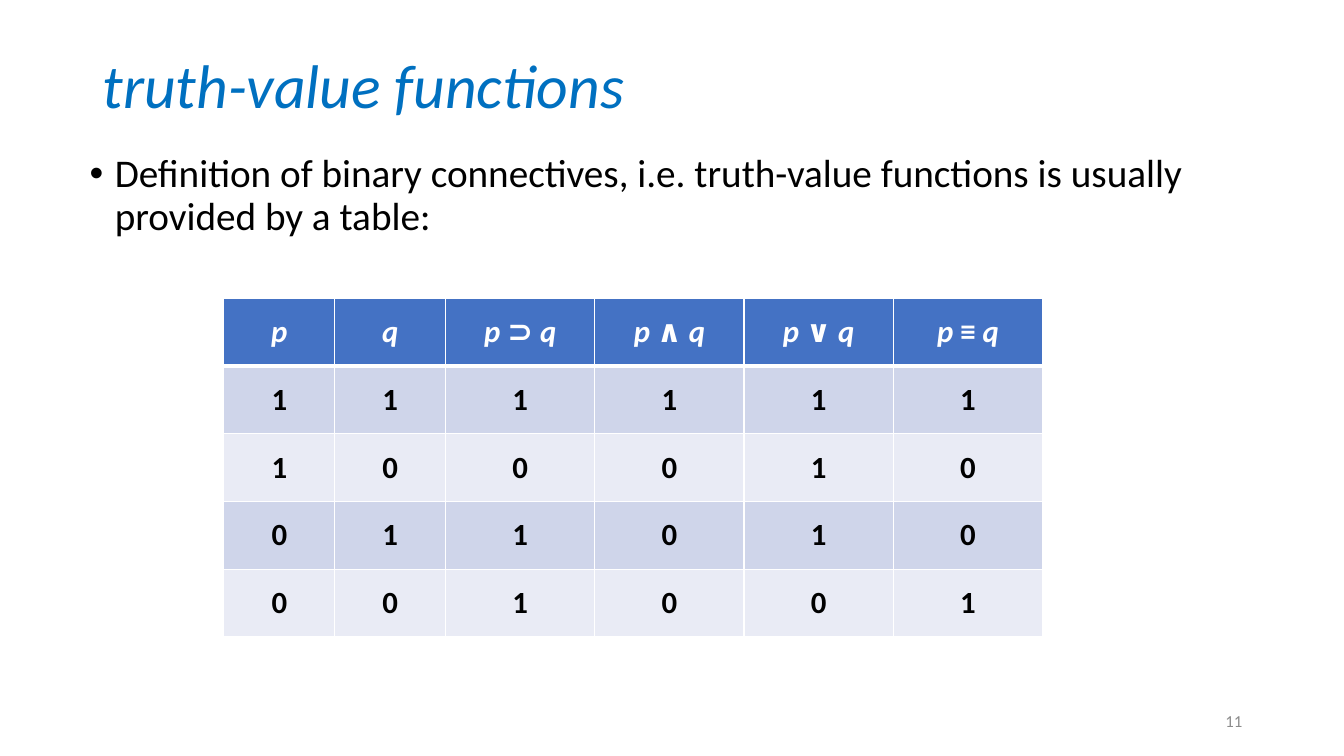
from pptx import Presentation
from pptx.dml.color import RGBColor
from pptx.enum.text import MSO_ANCHOR, PP_ALIGN
from pptx.oxml import parse_xml
from pptx.oxml.ns import nsdecls
from pptx.util import Pt

PX = 9144  # 100 px to the inch
FONT = "Calibri"
WHITE, BLACK, GREY = "FFFFFF", "000000", "8C8C8C"
TITLE, HEAD = "0070C0", "4472C4"
BANDS = ["CFD5EA", "E9EBF5"]

HEADS = ["p", "q", "p ⊃ q", "p ∧ q", "p ∨ q", "p ≡ q"]
ROWS = ["111111", "100010", "011010", "001001"]
WIDTHS = [110] * 2 + [148] * 4


def px(n):
    return round(n * PX)


def color(code):
    return RGBColor.from_string(code)


def add_run(para, text, size, code, bold=False, italic=False):
    run = para.add_run()
    run.text = text
    font = run.font
    font.name, font.size = FONT, Pt(size)
    font.bold, font.italic = bold, italic
    font.color.rgb = color(code)


def add_text(slide, box, anchor=MSO_ANCHOR.TOP):
    frame = slide.shapes.add_textbox(*map(px, box)).text_frame
    frame.word_wrap = True
    frame.vertical_anchor = anchor
    return frame.paragraphs[0]


def add_title(slide, box):
    para = add_text(slide, box, MSO_ANCHOR.MIDDLE)
    para.line_spacing = 0.9
    add_run(para, "truth-value functions", 44, TITLE, italic=True)


def add_body(slide, box):
    para = add_text(slide, box)
    para.line_spacing = 0.9
    para.space_before = Pt(10)
    props = para._p.get_or_add_pPr()
    props.set("marL", str(px(25)))
    props.set("indent", str(px(-25)))
    props.append(parse_xml(f'<a:buFont {nsdecls("a")} typeface="Arial"/>'))
    props.append(parse_xml(f'<a:buChar {nsdecls("a")} char="•"/>'))
    add_run(para, "Definition of binary connectives, i.e. truth-value "
            "functions is usually provided by a table:", 28, BLACK)


def add_number(slide, box):
    para = add_text(slide, box, MSO_ANCHOR.MIDDLE)
    para.alignment = PP_ALIGN.RIGHT
    add_run(para, "11", 12, GREY)


def set_edges(cell, top, bottom):
    props = cell._tc.get_or_add_tcPr()
    edges = zip(["lnL", "lnR", "lnT", "lnB"], [1, 1, top, bottom])
    for i, (tag, width) in enumerate(edges):
        # Edges come before the fill
        props.insert(i, parse_xml(
            f'<a:{tag} {nsdecls("a")} w="{Pt(width)}"><a:solidFill>'
            f'<a:srgbClr val="{WHITE}"/></a:solidFill></a:{tag}>'))


def style_cell(cell, fill, top=1, bottom=1):
    cell.fill.solid()
    cell.fill.fore_color.rgb = color(fill)
    cell.vertical_anchor = MSO_ANCHOR.MIDDLE
    set_edges(cell, top, bottom)
    para = cell.text_frame.paragraphs[0]
    para.alignment = PP_ALIGN.CENTER
    return para


def add_grid(slide, box):
    count = len(ROWS) + 1
    table = slide.shapes.add_table(count, len(HEADS), *map(px, box)).table
    for col, width in zip(table.columns, WIDTHS):
        col.width = px(width)
    for row in table.rows:
        row.height = px(box[3] / count)

    # Header: letters in italics, connectives upright
    for c, head in enumerate(HEADS):
        para = style_cell(table.cell(0, c), HEAD, bottom=3)
        parts = head.split()
        for i, part in enumerate(parts):
            gap = " " if i < len(parts) - 1 else ""
            add_run(para, part + gap, 22, WHITE, True, part.isalpha())

    # Truth values in banded rows
    for r, row in enumerate(ROWS):
        for c, value in enumerate(row):
            para = style_cell(table.cell(r + 1, c), BANDS[r % 2],
                              top=1 if r else 3)
            add_run(para, value, 22, BLACK, True)


def main():
    deck = Presentation()
    deck.slide_width, deck.slide_height = px(1333), px(750)
    slide = deck.slides.add_slide(deck.slide_layouts[6])
    add_title(slide, (92, 40, 1150, 96))
    add_body(slide, (79, 148, 1162, 547))
    add_number(slide, (942, 695, 300, 40))
    add_grid(slide, (222, 296, sum(WIDTHS), 336))
    deck.save("out.pptx")


if __name__ == "__main__":
    main()
